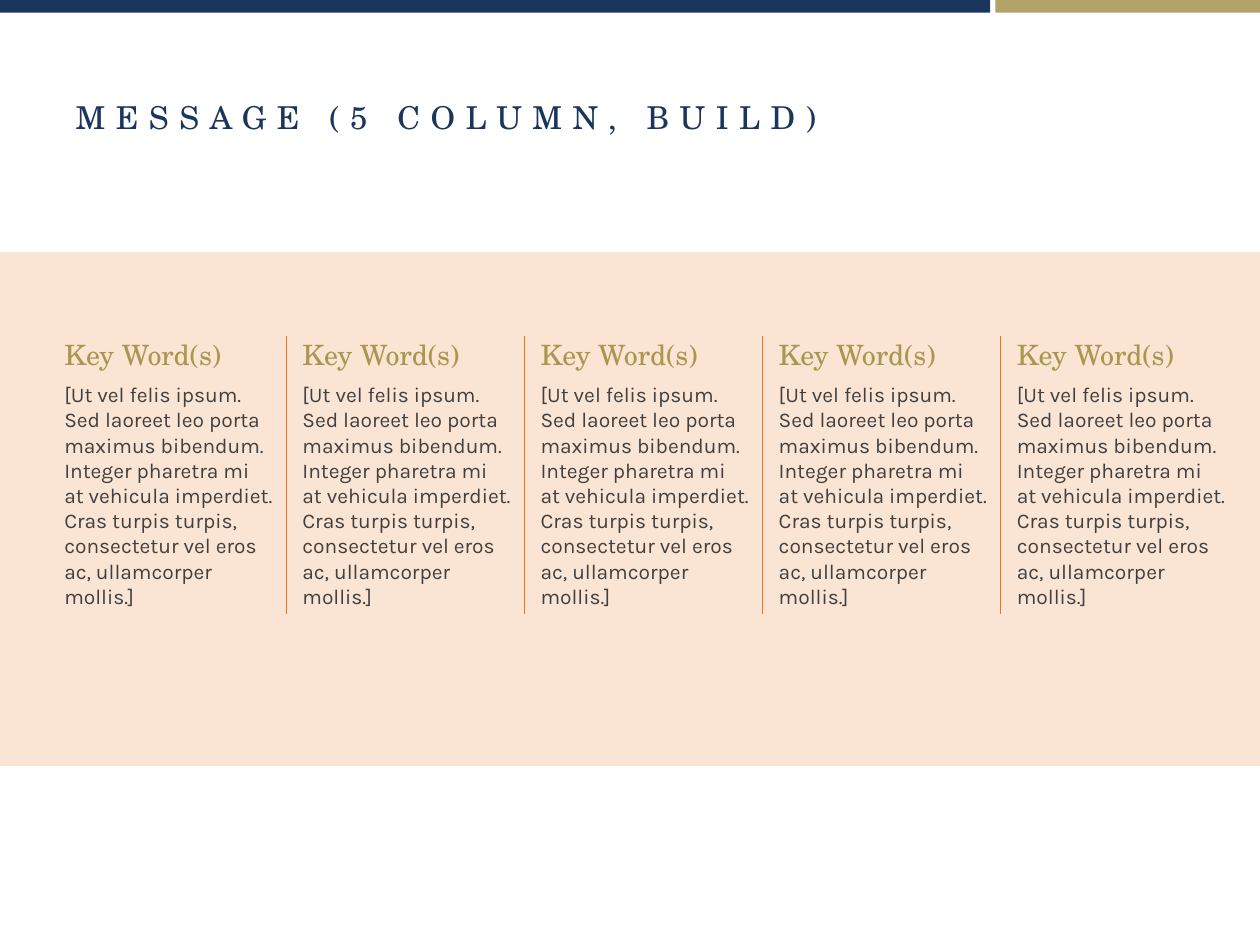
from dataclasses import dataclass

from lxml.etree import SubElement
from pptx import Presentation
from pptx.dml.color import RGBColor
from pptx.enum.shapes import MSO_CONNECTOR, MSO_SHAPE
from pptx.enum.text import MSO_ANCHOR, PP_ALIGN
from pptx.oxml.ns import qn
from pptx.util import Inches, Pt


@dataclass(frozen=True)
class Theme:
    serif: str = "TeX Gyre Schola"
    sans: str = "Karla"
    navy: str = "1B365D"
    gold: str = "B3A369"
    peach: str = "FAE4D3"
    orange: str = "E87721"
    title: str = "1A365D"
    key: str = "AB964F"
    body: str = "404040"
    title_size: int = 18
    key_size: int = 16
    body_size: int = 12


THEME = Theme()
COLUMNS = 5
LEFT, TOP, PITCH = 0.42, 2.67, 1.89
WIDTH, HEIGHT = 1.85, 2.67
RULE_GAP, RULE_HEIGHT = 0.04, 2.2
KEY = "Key Word(s)"
BODY = [
    "[Ut vel felis ipsum.",
    "Sed laoreet leo porta maximus bibendum. Integer pharetra mi",
    "at vehicula imperdiet. Cras turpis turpis, consectetur vel eros",
    "ac, ullamcorper mollis.]",
]


def write(para, text, *, font, size, color, before=0, spacing=0):
    """Fill a paragraph; each newline becomes a line break."""
    para.alignment = PP_ALIGN.LEFT
    para.space_before = Pt(before)
    for index, line in enumerate(text.split("\n")):
        if index:
            para.add_line_break()
        run = para.add_run()
        run.text = line
        run.font.name = font
        run.font.size = Pt(size)
        run.font.color.rgb = RGBColor.from_string(color)
        if spacing:
            run.font._element.set("spc", str(spacing * 100))


def add_band(slide, left, top, width, height, color):
    band = slide.shapes.add_shape(
        MSO_SHAPE.RECTANGLE, Inches(left), Inches(top), Inches(width), Inches(height))
    band.shadow.inherit = False
    band.fill.solid()
    band.fill.fore_color.rgb = RGBColor.from_string(color)
    band.line.fill.background()


def add_title(slide, text):
    title = slide.shapes.title
    title.left, title.top = Inches(0.5), Inches(0.3)
    title.width, title.height = Inches(9), Inches(1.25)
    frame = title.text_frame
    frame.vertical_anchor = MSO_ANCHOR.MIDDLE
    write(frame.paragraphs[0], text, font=THEME.serif, size=THEME.title_size,
          color=THEME.title, spacing=6)


def add_rule(slide, left):
    rule = slide.shapes.add_connector(
        MSO_CONNECTOR.STRAIGHT, Inches(left), Inches(TOP + RULE_HEIGHT),
        Inches(left), Inches(TOP))
    rule.line.color.rgb = RGBColor.from_string(THEME.orange)
    rule.line.width = Pt(0.5)
    SubElement(rule._element.spPr, qn("a:effectLst"))


def add_column(slide, left):
    box = slide.shapes.add_textbox(
        Inches(left), Inches(TOP), Inches(WIDTH), Inches(HEIGHT))
    frame = box.text_frame
    frame.word_wrap = True
    frame.margin_left = frame.margin_right = Inches(0.09)
    frame.margin_top, frame.margin_bottom = Inches(0.01), Inches(0.05)
    write(frame.paragraphs[0], KEY, font=THEME.serif, size=THEME.key_size,
          color=THEME.key)
    write(frame.add_paragraph(), "\n".join(BODY), font=THEME.sans,
          size=THEME.body_size, color=THEME.body, before=6)


def main():
    deck = Presentation()
    deck.slide_width, deck.slide_height = Inches(10), Inches(7.5)
    slide = deck.slides.add_slide(deck.slide_layouts.get_by_name("Title Only"))

    add_band(slide, 0, 0, 7.86, 0.1, THEME.navy)
    add_band(slide, 7.9, 0, 2.1, 0.1, THEME.gold)
    add_title(slide, "MESSAGE (5 COLUMN, BUILD)")
    add_band(slide, 0, 2, 10, 4.08, THEME.peach)

    for index in range(COLUMNS):
        left = LEFT + index * PITCH
        add_column(slide, left)
        if index:
            add_rule(slide, left - RULE_GAP)

    deck.save("out.pptx")


if __name__ == "__main__":
    main()
